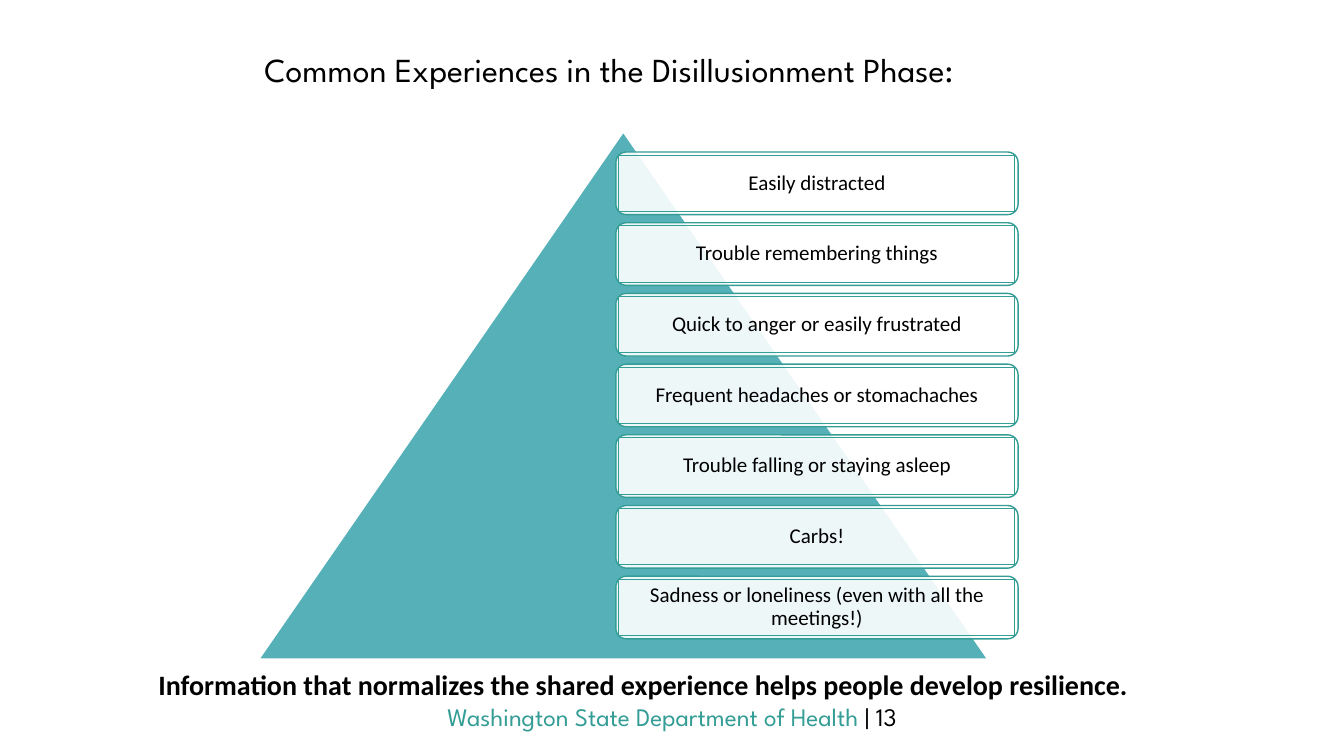
from lxml.etree import SubElement
from pptx import Presentation
from pptx.dml.color import RGBColor
from pptx.enum.shapes import MSO_SHAPE as Preset
from pptx.enum.text import MSO_ANCHOR as Anchor, PP_ALIGN as Align
from pptx.oxml.ns import qn
from pptx.util import Pt

COLORS = {"teal": "349D96", "pyramid": "55B0B8", "white": "FFFFFF", "black": "000000"}
HEADING_FONT, BODY_FONT = "League Spartan", "Calibri"

EXPERIENCES = [
    "Easily distracted",
    "Trouble remembering things",
    "Quick to anger or easily frustrated",
    "Frequent headaches or stomachaches",
    "Trouble falling or staying asleep",
    "Carbs!",
    "Sadness or loneliness (even with all the meetings!)",
]


class SlideBuilder:
    def __init__(self, slide):
        self.slide = slide

    def color(self, name):
        return RGBColor.from_string(COLORS[name])

    def style_run(self, run, font, size, color="black", bold=False):
        run.font.name = font
        run.font.size = Pt(size)
        run.font.bold = bold
        run.font.color.rgb = self.color(color)

    def text(self, box, pieces, font, size, bold=False, align=Align.CENTER,
             spacing=None, before=None):
        """Add a text box; pieces are (wording, colour) pairs on one line."""
        area = self.slide.shapes.add_textbox(*map(Pt, box))
        area.text_frame.word_wrap = True
        line = area.text_frame.paragraphs[0]
        line.alignment = align
        line.line_spacing = spacing
        line.space_before = before
        for wording, color in pieces:
            run = line.add_run()
            run.text = wording
            self.style_run(run, font, size, color, bold)

    def shape(self, preset, box, line, width, fill=None, opacity=100):
        shape = self.slide.shapes.add_shape(preset, *map(Pt, box))
        shape.shadow.inherit = False
        shape.line.color.rgb = self.color(line)
        shape.line.width = Pt(width)
        if fill is None:
            shape.fill.background()
            return shape
        shape.fill.solid()
        shape.fill.fore_color.rgb = self.color(fill)
        if opacity < 100:
            srgb = shape.fill._xPr.find(".//" + qn("a:srgbClr"))
            SubElement(srgb, qn("a:alpha")).set("val", str(opacity * 1000))
        return shape

    def card(self, left, top, width, height, wording):
        """A translucent rounded card with an inset text frame."""
        inset = 2.2
        self.shape(Preset.ROUNDED_RECTANGLE, (left, top, width, height),
                   "teal", 1, "white", 90)
        label = self.shape(
            Preset.RECTANGLE,
            (left + inset, top + inset, width - 2 * inset, height - 2 * inset),
            "teal", 0.75)
        frame = label.text_frame
        frame.text = wording
        frame.word_wrap = True
        frame.vertical_anchor = Anchor.MIDDLE
        frame.margin_left = frame.margin_right = Pt(4.5)
        frame.margin_top = frame.margin_bottom = Pt(4.5)
        line = frame.paragraphs[0]
        line.alignment = Align.CENTER
        line.line_spacing = 0.9
        self.style_run(line.runs[0], BODY_FONT, 15)


def main():
    deck = Presentation()
    deck.slide_width, deck.slide_height = Pt(960), Pt(540)
    builder = SlideBuilder(deck.slides.add_slide(deck.slide_layouts[6]))

    # Footer
    builder.text((0, 497.5, 960, 29),
                 [("Washington State Department of Health ", "teal"), ("| 13", "black")],
                 HEADING_FONT, 18)

    # Title and closing message
    builder.text((36, 28.8, 798, 67),
                 [("Common Experiences in the Disillusionment Phase:", "black")],
                 HEADING_FONT, 24, spacing=1.1, before=Pt(10))
    builder.text((106, 471, 711, 49),
                 [("Information that normalizes the shared experience "
                   "helps people develop resilience.", "black")],
                 BODY_FONT, 20, bold=True, align=Align.LEFT, spacing=1.1, before=Pt(10))

    # Pyramid with its stack of experience cards
    builder.shape(Preset.ISOSCELES_TRIANGLE, (185, 94.3, 520.5, 376.5),
                  "white", 1, "pyramid")
    for row, experience in enumerate(EXPERIENCES):
        builder.card(439.9, 108.6 + row * 50.5, 287.3, 44.7, experience)

    deck.save("out.pptx")


if __name__ == "__main__":
    main()
